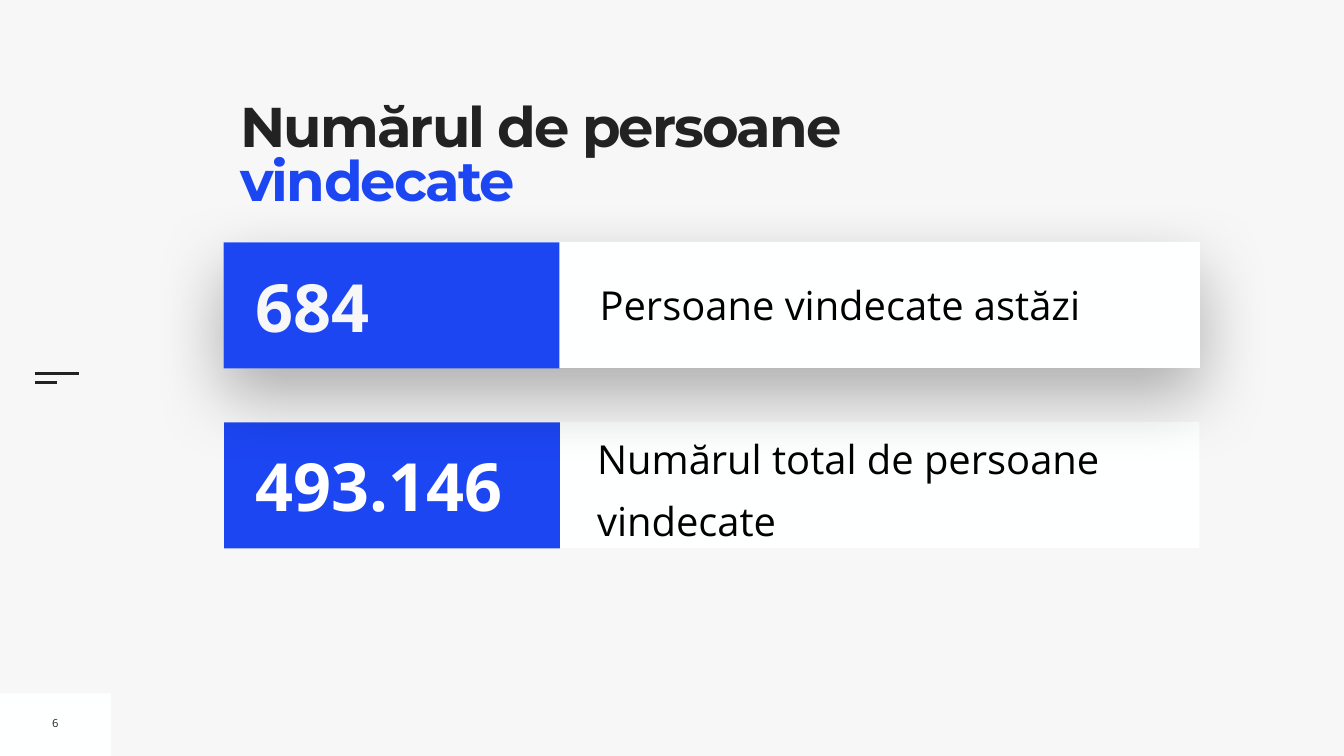
from dataclasses import dataclass

from lxml import etree
from pptx import Presentation
from pptx.dml.color import RGBColor
from pptx.enum.shapes import MSO_CONNECTOR as Connector, MSO_SHAPE as Shape
from pptx.enum.text import MSO_ANCHOR as Anchor, MSO_AUTO_SIZE as AutoSize, PP_ALIGN as Align
from pptx.oxml import parse_xml
from pptx.oxml.ns import nsdecls, qn
from pptx.util import Inches, Pt

COLORS = {
    "page": "F7F7F7",
    "white": "FEFFFF",
    "number": "FFFFFF",
    "blue": "1D46F3",
    "dark": "222222",
    "black": "000000",
}
Box = tuple[float, float, float, float]


@dataclass(frozen=True)
class Span:
    text: str
    size: float
    color: str
    font: str = "Open Sans"
    bold: bool = False
    tracking: float = 0


@dataclass(frozen=True)
class StatRow:
    left: float
    top: float
    width: float
    number: Span
    label: Span
    label_box: Box
    label_inset: float = 0.1
    label_format: dict | None = None
    shadow: bool = False


def rgb(name: str) -> RGBColor:
    return RGBColor.from_string(COLORS[name])


def add_panel(page, box: Box, color: str):
    panel = page.shapes.add_shape(Shape.RECTANGLE, *map(Inches, box))
    panel.shadow.inherit = False
    panel.fill.solid()
    panel.fill.fore_color.rgb = rgb(color)
    panel.line.fill.background()
    return panel


def add_soft_shadow(panel) -> None:
    effects = panel._element.spPr.find(qn("a:effectLst"))
    effects.append(parse_xml(
        f'<a:outerShdw {nsdecls("a")} blurRad="{Pt(100)}" dist="{Pt(40)}" '
        f'dir="5400000" rotWithShape="0"><a:srgbClr val="{COLORS["black"]}">'
        '<a:alpha val="30000"/></a:srgbClr></a:outerShdw>'
    ))


def add_text(page, box: Box, spans: list[Span], inset: float = 0.1,
             anchor=Anchor.MIDDLE, wrap: bool = True, para_format: dict | None = None) -> None:
    frame = page.shapes.add_textbox(*map(Inches, box)).text_frame
    frame_format = {"word_wrap": wrap, "vertical_anchor": anchor, "auto_size": AutoSize.NONE}
    frame_format |= {f"margin_{side}": Inches(inset) for side in ("left", "top", "right", "bottom")}
    for name, value in frame_format.items():
        setattr(frame, name, value)
    para = frame.paragraphs[0]
    for name, value in (para_format or {}).items():
        setattr(para, name, value)
    for span in spans:
        run = para.add_run()
        run.text = span.text
        for name, value in {"name": span.font, "size": Pt(span.size), "bold": span.bold}.items():
            setattr(run.font, name, value)
        run.font.color.rgb = rgb(span.color)
        if span.tracking:
            run._r.get_or_add_rPr().set("spc", str(round(span.tracking * 100)))


def add_rule(page, left: float, top: float, length: float) -> None:
    rule = page.shapes.add_connector(
        Connector.STRAIGHT, Inches(left), Inches(top), Inches(left + length), Inches(top))
    rule.line.color.rgb = rgb("dark")
    rule.line.width = Pt(3)
    etree.SubElement(rule._element.spPr, qn("a:effectLst"))


def add_stat_row(page, row: StatRow) -> None:
    card = add_panel(page, (row.left, row.top, row.width, 2.5), "white")
    if row.shadow:
        add_soft_shadow(card)
    add_text(page, row.label_box, [row.label], row.label_inset, para_format=row.label_format)
    add_panel(page, (row.left, row.top + 0.01, 6.66, 2.5), "blue")
    add_text(page, (row.left + 0.53, row.top + 0.36, 6.03, 1.8), [row.number])


ROWS = [
    StatRow(4.45, 8.37, 19.35,
            Span("493.146", 95, "number", bold=True),
            Span("Numărul total de persoane vindecate", 57, "black"),
            (11.85, 8.39, 11.95, 2.36), 0,
            {"line_spacing": 1.3, "space_before": Pt(20)}),
    StatRow(4.44, 4.8, 19.37,
            Span("684", 95, "page", bold=True),
            Span("Persoane vindecate astăzi", 57, "black"),
            (11.8, 5.47, 11.76, 1.16), shadow=True),
]


def main() -> None:
    deck = Presentation()
    deck.slide_width, deck.slide_height = Inches(26.67), Inches(15)
    page = deck.slides.add_slide(deck.slide_layouts[6])
    page.background.fill.solid()
    page.background.fill.fore_color.rgb = rgb("page")

    add_panel(page, (0, 13.76, 2.2, 1.24), "white")
    for top, length in ((7.41, 0.88), (7.59, 0.44)):
        add_rule(page, 0.69, top, length)
    title = [Span(text, 80, color, "Montserrat", True, -2.7)
             for text, color in (("Numărul de persoane ", "dark"), ("vindecate", "blue"))]
    add_text(page, (4.77, 2.07, 13.01, 2.73), title, 0, Anchor.TOP,
             para_format={"line_spacing": 0.8})
    add_text(page, (0.93, 14.09, 0.34, 0.51), [Span("6", 16, "dark")], wrap=False,
             para_format={"alignment": Align.CENTER})
    for row in ROWS:
        add_stat_row(page, row)
    deck.save("out.pptx")


if __name__ == "__main__":
    main()
